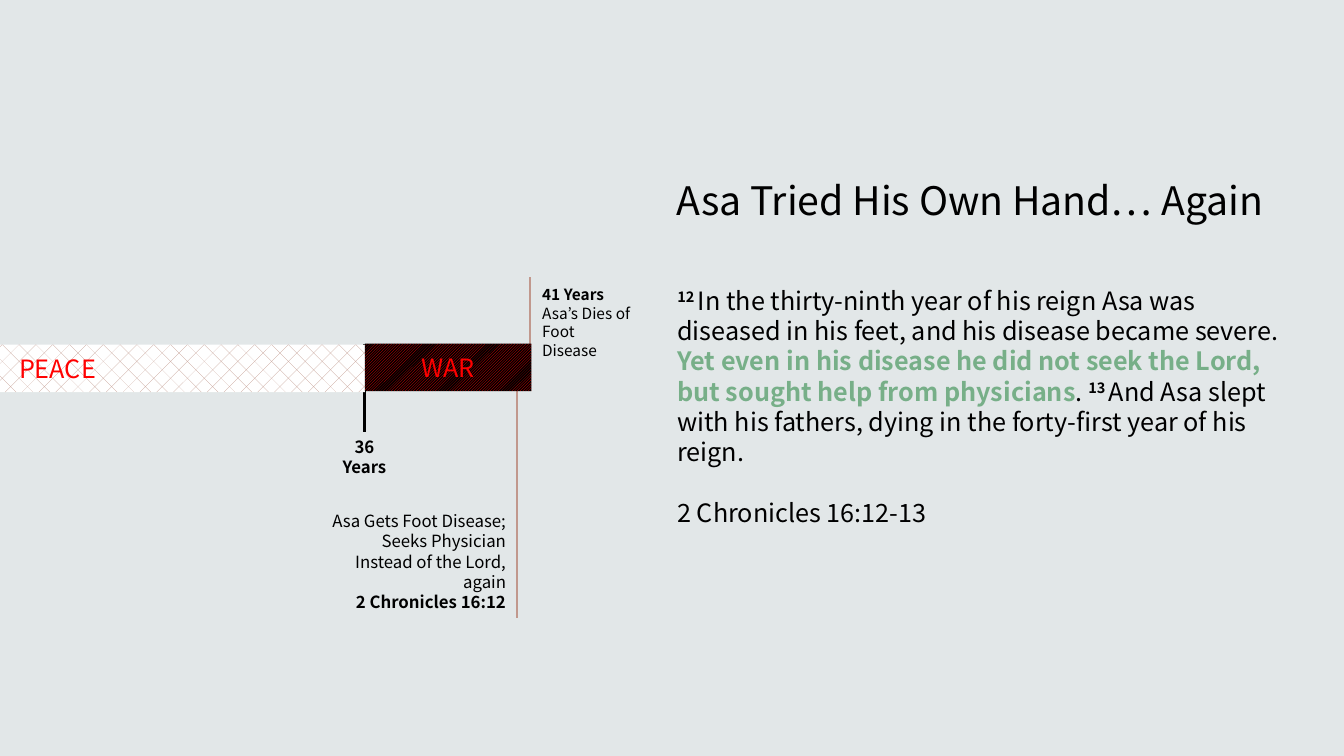
import pptx
import pptx.util
import pptx.dml.color
import pptx.enum.dml
import pptx.enum.shapes
import pptx.enum.text
import pptx.oxml.ns
import lxml.etree

WIDTH, HEIGHT = 13.33, 7.5
INK, PAPER, CLAY, RED, SAGE = "000000", "FFFFFF", "C1988D", "FF0000", "77AF88"
ALIGN = pptx.enum.text.PP_ALIGN
ANCHOR = pptx.enum.text.MSO_ANCHOR
PATTERN = pptx.enum.dml.MSO_PATTERN


def color(value):
    return pptx.dml.color.RGBColor.from_string(value)


class TimelineSlide:
    """Places styled elements on one slide by percentages of its width and height."""

    def __init__(self, presentation, background, font_name):
        self.presentation = presentation
        self.font_name = font_name
        self.slide = presentation.slides.add_slide(presentation.slide_layouts[5])
        fill = self.slide.background.fill
        fill.solid()
        fill.fore_color.rgb = color(background)

    def across(self, percent):
        return round(self.presentation.slide_width * percent / 100)

    def down(self, percent):
        return round(self.presentation.slide_height * percent / 100)

    def box(self, left, top, width, height):
        return self.across(left), self.down(top), self.across(width), self.down(height)

    def set_text(self, shape, paragraphs, size, ink=INK, align=ALIGN.LEFT,
                 anchor=ANCHOR.TOP, wrap=True, gap=0):
        frame = shape.text_frame
        frame.word_wrap = wrap
        frame.auto_size = pptx.enum.text.MSO_AUTO_SIZE.NONE
        frame.vertical_anchor = anchor
        frame.margin_left = frame.margin_right = pptx.util.Inches(0.1)
        frame.margin_top = frame.margin_bottom = pptx.util.Inches(0.05)
        for index, (runs, bold) in enumerate(paragraphs):
            paragraph = frame.add_paragraph() if index else frame.paragraphs[0]
            paragraph.alignment = align
            paragraph.space_before = pptx.util.Pt(gap if index else 0)
            font = paragraph.font
            font.name, font.size, font.bold = self.font_name, pptx.util.Pt(size), bold
            font.color.rgb = color(ink)
            for text, kind in runs:
                run = paragraph.add_run()
                run.text = text
                if kind:
                    run.font.bold = True
                if kind == "verse":
                    run.font._element.set("baseline", "30000")
                if kind == "key":
                    run.font.color.rgb = color(SAGE)

    def title(self, text, place, size):
        shape = self.slide.shapes.title
        shape.left, shape.top, shape.width, shape.height = self.box(*place)
        self.set_text(shape, [([(text, None)], False)], size, wrap=False)

    def text(self, paragraphs, place, size, **style):
        shape = self.slide.shapes.add_textbox(*self.box(*place))
        self.set_text(shape, paragraphs, size, **style)

    def period(self, label, place, pattern, front, back):
        shape = self.slide.shapes.add_shape(
            pptx.enum.shapes.MSO_SHAPE.RECTANGLE, *self.box(*place))
        shape.shadow.inherit = False
        shape.line.fill.background()
        shape.fill.patterned()
        shape.fill.pattern = pattern
        shape.fill.fore_color.rgb = color(front)
        shape.fill.back_color.rgb = color(back)
        self.set_text(shape, [([(label, None)], False)], 18, RED, ALIGN.CENTER, ANCHOR.MIDDLE)

    def marker(self, column, top, bottom, ink):
        line = self.slide.shapes.add_connector(
            pptx.enum.shapes.MSO_CONNECTOR.STRAIGHT, self.across(column), self.down(top),
            self.across(column), self.down(bottom))
        line.line.color.rgb = color(ink)
        line.line.width = pptx.util.Pt(1.5)
        lxml.etree.SubElement(line._element.spPr, pptx.oxml.ns.qn("a:effectLst"))


def main():
    presentation = pptx.Presentation()
    presentation.slide_width = pptx.util.Inches(WIDTH)
    presentation.slide_height = pptx.util.Inches(HEIGHT)
    page = TimelineSlide(presentation, "E2E7E8", "Noto Sans CJK JP")

    page.marker(27.12, 45.5, 57.1, INK)
    page.marker(38.48, 48.5, 81.7, CLAY)
    page.marker(39.46, 36.7, 49.2, CLAY)

    page.text([([("41 Years", None)], True), ([("Asa’s Dies of Foot Disease", None)], False)],
              (39.6, 37.07, 8.2, 11.2), 11)
    page.text([([("Asa Gets Foot Disease; Seeks Physician Instead of the Lord, again", None)], False),
               ([("2 Chronicles 16:12", None)], True)],
              (23.1, 66.93, 15.3, 14.8), 12, align=ALIGN.RIGHT)
    passage = [
        ("12 ", "verse"),
        ("In the thirty-ninth year of his reign Asa was diseased in his feet, "
         "and his disease became severe. ", None),
        ("Yet even in his disease he did not seek the Lord, "
         "but sought help from physicians", "key"),
        (". ", None),
        ("13 ", "verse"),
        ("And Asa slept with his fathers, dying in the forty-first year of his reign.", None),
    ]
    page.text([(passage, False), ([("2 Chronicles 16:12-13", None)], False)],
              (49.66, 37.07, 47.94, 33.6), 18, gap=21.7)
    page.text([([("36", None)], True), ([("Years", None)], True)],
              (24.53, 57.07, 5.18, 6.67), 12, align=ALIGN.CENTER, wrap=False)

    page.period("PEACE", (-18.6, 45.6, 45.76, 6.27), PATTERN.DOTTED_DIAMOND, CLAY, PAPER)
    page.period("WAR", (27.16, 45.47, 12.38, 6.27), PATTERN.LIGHT_UPWARD_DIAGONAL, RED, INK)
    page.title("Asa Tried His Own Hand… Again", (49.59, 22.67, 48.16, 7.6), 28)
    presentation.save("out.pptx")


if __name__ == "__main__":
    main()
